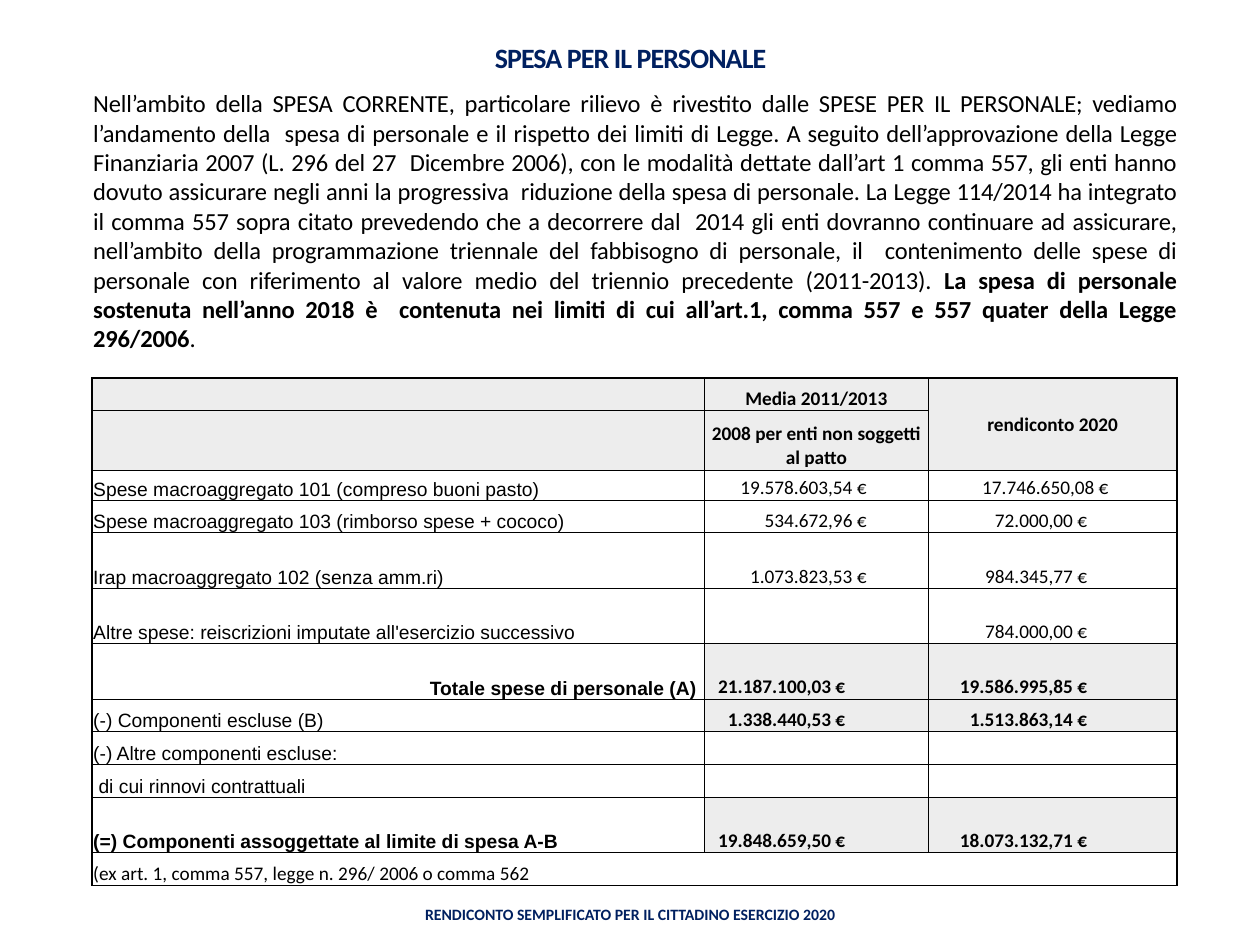
from lxml import etree
from pptx import Presentation
from pptx.dml.color import RGBColor
from pptx.enum.text import MSO_ANCHOR, MSO_AUTO_SIZE, PP_ALIGN
from pptx.oxml.ns import qn
from pptx.util import Inches, Pt

LEFT, CENTER, RIGHT, JUSTIFY = PP_ALIGN.LEFT, PP_ALIGN.CENTER, PP_ALIGN.RIGHT, PP_ALIGN.JUSTIFY
BOTTOM, MIDDLE, TOP = MSO_ANCHOR.BOTTOM, MSO_ANCHOR.MIDDLE, MSO_ANCHOR.TOP

THEME = {
    "navy": "002060", "ink": "000000", "shade": "EDEDED",
    "sans": "Calibri", "label": "Arial",
    "title": 16, "body": 14, "cell": 11, "footer": 9,
    "outer": 1, "inner": 0.5,
}

TITLE = "SPESA PER IL PERSONALE"
FOOTER = "RENDICONTO SEMPLIFICATO PER IL CITTADINO ESERCIZIO 2020"
BODY = [
    ("Nell’ambito della SPESA CORRENTE, particolare rilievo è rivestito dalle SPESE PER IL PERSONALE; "
     "vediamo l’andamento della  spesa di personale e il rispetto dei limiti di Legge. A seguito "
     "dell’approvazione della Legge Finanziaria 2007 (L. 296 del 27  Dicembre 2006), con le modalità "
     "dettate dall’art 1 comma 557, gli enti hanno dovuto assicurare negli anni la progressiva  riduzione "
     "della spesa di personale. La Legge 114/2014 ha integrato il comma 557 sopra citato prevedendo che a "
     "decorrere dal  2014 gli enti dovranno continuare ad assicurare, nell’ambito della programmazione "
     "triennale del fabbisogno di personale, il  contenimento delle spese di personale con riferimento al "
     "valore medio del triennio precedente (2011-2013). ", False),
    ("La spesa di personale sostenuta nell’anno 2018 è  contenuta nei limiti di cui all’art.1, comma "
     "557 e 557 quater della Legge 296/2006", True),
    (".", False),
]

HEADERS = [("", "Media 2011/2013", "rendiconto 2020"),
           ("", "2008 per enti non soggetti al patto", "")]
ITEMS = [
    ("Spese macroaggregato 101 (compreso buoni pasto)", "19.578.603,54 €", "17.746.650,08 €"),
    ("Spese macroaggregato 103 (rimborso spese + cococo)", "534.672,96 €", "72.000,00 €"),
    ("Irap macroaggregato 102 (senza amm.ri)", "1.073.823,53 €", "984.345,77 €"),
    ("Altre spese: reiscrizioni imputate all'esercizio successivo", "", "784.000,00 €"),
    ("Totale spese di personale (A)", "21.187.100,03 €", "19.586.995,85 €"),
    ("(-) Componenti escluse (B)", "1.338.440,53 €", "1.513.863,14 €"),
    ("(-) Altre componenti escluse:", "", ""),
    (" di cui rinnovi contrattuali", "", ""),
    ("(=) Componenti assoggettate al limite di spesa A-B", "19.848.659,50 €", "18.073.132,71 €"),
]
NOTE = ("(ex art. 1, comma 557, legge n. 296/ 2006 o comma 562", "", "")
ROWS = HEADERS + ITEMS + [NOTE]

TOTAL_ROW, EXCLUDED_ROW, RESULT_ROW, NOTE_ROW = 6, 7, 10, 11
SHADED_ROWS = {TOTAL_ROW, EXCLUDED_ROW, RESULT_ROW}
BOLD_LABEL_ROWS = {TOTAL_ROW, RESULT_ROW}
FIRST_ITEM = len(HEADERS)

COLUMN_WIDTHS = [4.86, 1.78, 1.97]
ROW_HEIGHTS = [0.26, 0.47, 0.24, 0.26, 0.44, 0.44, 0.44, 0.26, 0.26, 0.26, 0.44, 0.26]
PADDING = 0.01


def amount_inset(row, col):
    if col == 1:
        return 0.66 if row in SHADED_ROWS else 0.49
    return 0.54 if row == FIRST_ITEM else 0.71


def add_run(paragraph, text, size, color, font=THEME["sans"], bold=False, spacing=0):
    run = paragraph.add_run()
    run.text = text
    for attribute, value in {"name": font, "size": Pt(size), "bold": bold}.items():
        setattr(run.font, attribute, value)
    run.font.color.rgb = RGBColor.from_string(color)
    if spacing:
        run._r.get_or_add_rPr().set("spc", str(round(spacing * 100)))


def format_frame(frame, anchor, align, top=0):
    settings = {"margin_left": 0, "margin_right": 0, "margin_top": Inches(top), "margin_bottom": 0,
                "word_wrap": True, "auto_size": MSO_AUTO_SIZE.NONE, "vertical_anchor": anchor}
    for attribute, value in settings.items():
        setattr(frame, attribute, value)
    paragraph = frame.paragraphs[0]
    paragraph.alignment = align
    return paragraph


def set_borders(cell, row, col):
    last_row, last_col = len(ROWS) - 1, len(COLUMN_WIDTHS) - 1
    note = row == NOTE_ROW
    edges = [("L", col == 0, note), ("R", col == last_col, note),
             ("T", row == 0, False), ("B", row == last_row, False)]
    properties = cell._tc.get_or_add_tcPr()
    for position, (side, is_outer, hidden_inside) in enumerate(edges):
        width = Pt(THEME["outer"] if is_outer else THEME["inner"])
        line = etree.Element(qn(f"a:ln{side}"), w=str(int(width)))
        if hidden_inside and not is_outer:
            etree.SubElement(line, qn("a:noFill"))
        else:
            fill = etree.SubElement(line, qn("a:solidFill"))
            etree.SubElement(fill, qn("a:srgbClr"), val=THEME["ink"])
        properties.insert(position, line)


def fill_cell(cell, row, col, text):
    header = row < FIRST_ITEM
    label = col == 0
    if header or (row in SHADED_ROWS and not label):
        cell.fill.solid()
        cell.fill.fore_color.rgb = RGBColor.from_string(THEME["shade"])
    else:
        cell.fill.background()

    right = PADDING
    if header:
        align, bold = CENTER, True
    elif label:
        align, bold = (RIGHT if row == TOTAL_ROW else LEFT), row in BOLD_LABEL_ROWS
        right = 0.06 if row == TOTAL_ROW else PADDING
    else:
        align, bold = RIGHT, row in SHADED_ROWS
        right = amount_inset(row, col) if text else PADDING
    settings = {"margin_left": Inches(PADDING), "margin_right": Inches(right),
                "margin_top": Inches(PADDING), "margin_bottom": 0,
                "vertical_anchor": MIDDLE if header and col == 2 else BOTTOM}
    for attribute, value in settings.items():
        setattr(cell, attribute, value)

    paragraph = cell.text_frame.paragraphs[0]
    paragraph.alignment = align
    if text:
        font = THEME["label"] if label and row != NOTE_ROW else THEME["sans"]
        add_run(paragraph, text, THEME["cell"], THEME["ink"], font, bold)
    else:
        etree.SubElement(paragraph._p, qn("a:endParaRPr"), sz=str(THEME["cell"] * 100))
    set_borders(cell, row, col)


def add_costs(slide):
    place = map(Inches, (0.73, 3, sum(COLUMN_WIDTHS), sum(ROW_HEIGHTS)))
    costs = slide.shapes.add_table(len(ROWS), len(COLUMN_WIDTHS), *place).table
    costs.first_row = costs.horz_banding = False
    for column, width in zip(costs.columns, COLUMN_WIDTHS):
        column.width = Inches(width)
    for line, height in zip(costs.rows, ROW_HEIGHTS):
        line.height = Inches(height)
    costs.cell(0, 2).merge(costs.cell(1, 2))
    for row, texts in enumerate(ROWS):
        for col, text in enumerate(texts):
            fill_cell(costs.cell(row, col), row, col, text)


def main():
    deck = Presentation()
    deck.slide_width, deck.slide_height = Inches(10), Inches(7.5)
    slide = deck.slides.add_slide(deck.slide_layouts[5])

    title = slide.shapes.title
    title.left, title.top, title.width, title.height = map(Inches, (2.69, 0.29, 4.63, 0.3))
    heading = format_frame(title.text_frame, BOTTOM, CENTER)
    heading.line_spacing = 0.85
    add_run(heading, TITLE, THEME["title"], THEME["navy"], bold=True, spacing=-0.5)

    body = slide.shapes.add_textbox(*map(Inches, (0.73, 0.69, 8.61, 2.13)))
    account = format_frame(body.text_frame, TOP, JUSTIFY, PADDING)
    account.space_before = Pt(1)
    account._p.get_or_add_pPr().set("marL", str(Inches(PADDING)))
    for text, bold in BODY:
        add_run(account, text, THEME["body"], THEME["ink"], bold=bold, spacing=-0.1)

    add_costs(slide)

    footer = slide.shapes.add_textbox(*map(Inches, (3.02, 7.06, 3.96, 0.4)))
    closing = format_frame(footer.text_frame, MIDDLE, CENTER)
    add_run(closing, FOOTER, THEME["footer"], THEME["navy"], bold=True)

    deck.save("out.pptx")


if __name__ == "__main__":
    main()
